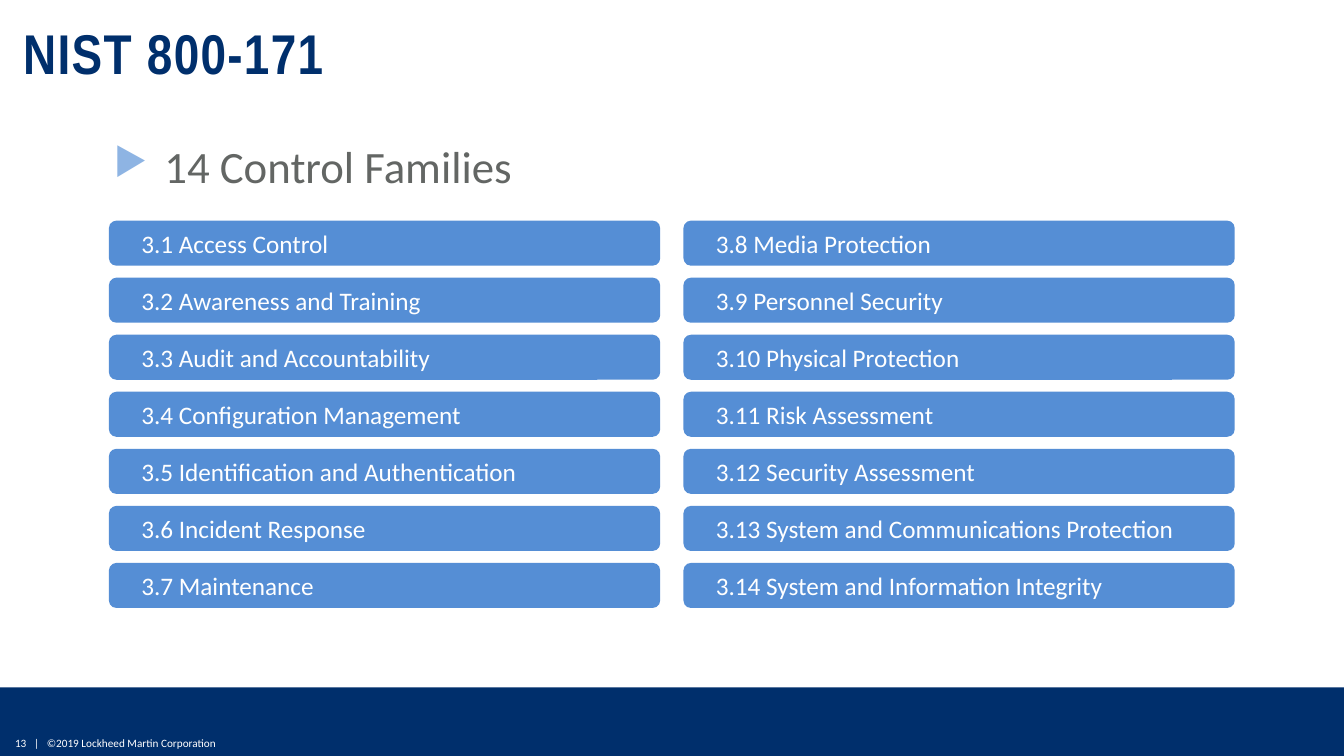
from lxml import etree
from pptx import Presentation
from pptx.dml.color import RGBColor
from pptx.enum import shapes, text
from pptx.oxml.ns import qn
from pptx.util import Pt

# Content
TITLE = "NIST 800-171"
HEADING = "14 Control Families"
FOOTER = "13   |   ©2019 Lockheed Martin Corporation"
FAMILIES = [
    "Access Control",
    "Awareness and Training",
    "Audit and Accountability",
    "Configuration Management",
    "Identification and Authentication",
    "Incident Response",
    "Maintenance",
    "Media Protection",
    "Personnel Security",
    "Physical Protection",
    "Risk Assessment",
    "Security Assessment",
    "System and Communications Protection",
    "System and Information Integrity",
]

# Style and layout, in points
NAVY, BLUE, PALE_BLUE, GREY, WHITE = "002F6C", "558ED5", "8EB4E3", "636664", "FFFFFF"
SLIDE_WIDTH, SLIDE_HEIGHT = 960, 540
BAND_TOP = 491
ROWS = 7
GRID_LEFT, GRID_TOP = 77.8, 157.6
COLUMN_STEP, ROW_STEP = 410.4, 40.75
BOX_WIDTH, BOX_HEIGHT = 393.8, 32.2


def color(hex_string):
    return RGBColor.from_string(hex_string)


def write(shape, words, size, hex_string, font="Calibri",
          anchor=text.MSO_ANCHOR.MIDDLE, insets=(0, 0, 0, 0)):
    """Put one left-aligned paragraph in a shape and return it."""
    frame = shape.text_frame
    frame.word_wrap = True
    frame.vertical_anchor = anchor
    (frame.margin_left, frame.margin_top,
     frame.margin_right, frame.margin_bottom) = map(Pt, insets)
    paragraph = frame.paragraphs[0]
    paragraph.text = words
    paragraph.alignment = text.PP_ALIGN.LEFT
    paragraph.font.name = font
    paragraph.font.size = Pt(size)
    paragraph.font.color.rgb = color(hex_string)
    return paragraph


def add_box(slide, kind, box, fill):
    shape = slide.shapes.add_shape(kind, *map(Pt, box))
    shape.shadow.inherit = False
    shape.fill.solid()
    shape.fill.fore_color.rgb = color(fill)
    shape.line.fill.background()
    return shape


def add_text(slide, box, *args, **options):
    return write(slide.shapes.add_textbox(*map(Pt, box)), *args, **options)


def add_bullet(paragraph, character, hex_string, percent, indent):
    properties = paragraph._p.get_or_add_pPr()
    properties.set("marL", str(Pt(indent)))
    properties.set("indent", str(-Pt(indent)))
    # Bullet elements precede the default run properties
    bullet_color = etree.Element(qn("a:buClr"))
    etree.SubElement(bullet_color, qn("a:srgbClr"), val=hex_string)
    bullet_size = etree.Element(qn("a:buSzPct"), val=str(percent * 1000))
    bullet = etree.Element(qn("a:buChar"), char=character)
    for position, element in enumerate((bullet_color, bullet_size, bullet)):
        properties.insert(position, element)


def main():
    presentation = Presentation()
    presentation.slide_width = Pt(SLIDE_WIDTH)
    presentation.slide_height = Pt(SLIDE_HEIGHT)
    slide = presentation.slides.add_slide(presentation.slide_layouts[6])

    # Footer band
    add_box(slide, shapes.MSO_SHAPE.RECTANGLE,
            (0, BAND_TOP, SLIDE_WIDTH, SLIDE_HEIGHT - BAND_TOP), NAVY)
    add_text(slide, (10.8, 523.5, 344, 14.4), FOOTER, 8, WHITE)

    # Title and heading
    title = add_text(slide, (16.5, 20, 896, 41.8), TITLE, 40, NAVY,
                     font="Arial Narrow", anchor=text.MSO_ANCHOR.BOTTOM)
    title.font.bold = True
    title.line_spacing = 0.9
    title.runs[0]._r.get_or_add_rPr().set("spc", "100")
    heading = add_text(slide, (81.4, 99.4, 813.6, 38.9), HEADING, 32, GREY,
                       anchor=text.MSO_ANCHOR.TOP)
    add_bullet(heading, "▶", PALE_BLUE, 85, 36)

    # Control families, filled column by column
    for index, family in enumerate(FAMILIES):
        column, row = divmod(index, ROWS)
        box = (GRID_LEFT + column * COLUMN_STEP, GRID_TOP + row * ROW_STEP,
               BOX_WIDTH, BOX_HEIGHT)
        shape = add_box(slide, shapes.MSO_SHAPE.ROUNDED_RECTANGLE, box, BLUE)
        write(shape, f"3.{index + 1} {family}", 18, WHITE,
              insets=(21.6, 3.6, 7.2, 3.6))

    presentation.save("out.pptx")


if __name__ == "__main__":
    main()
